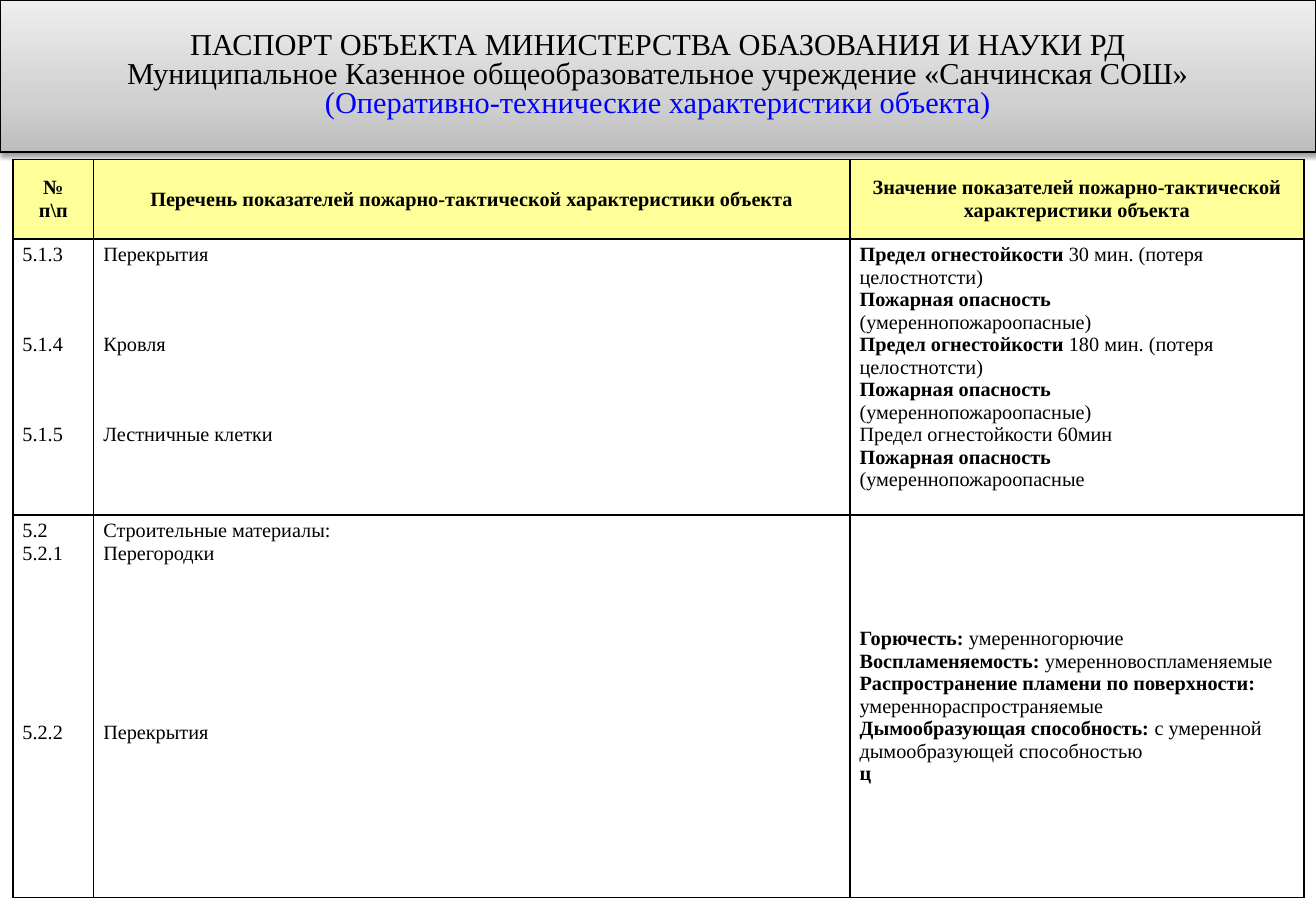
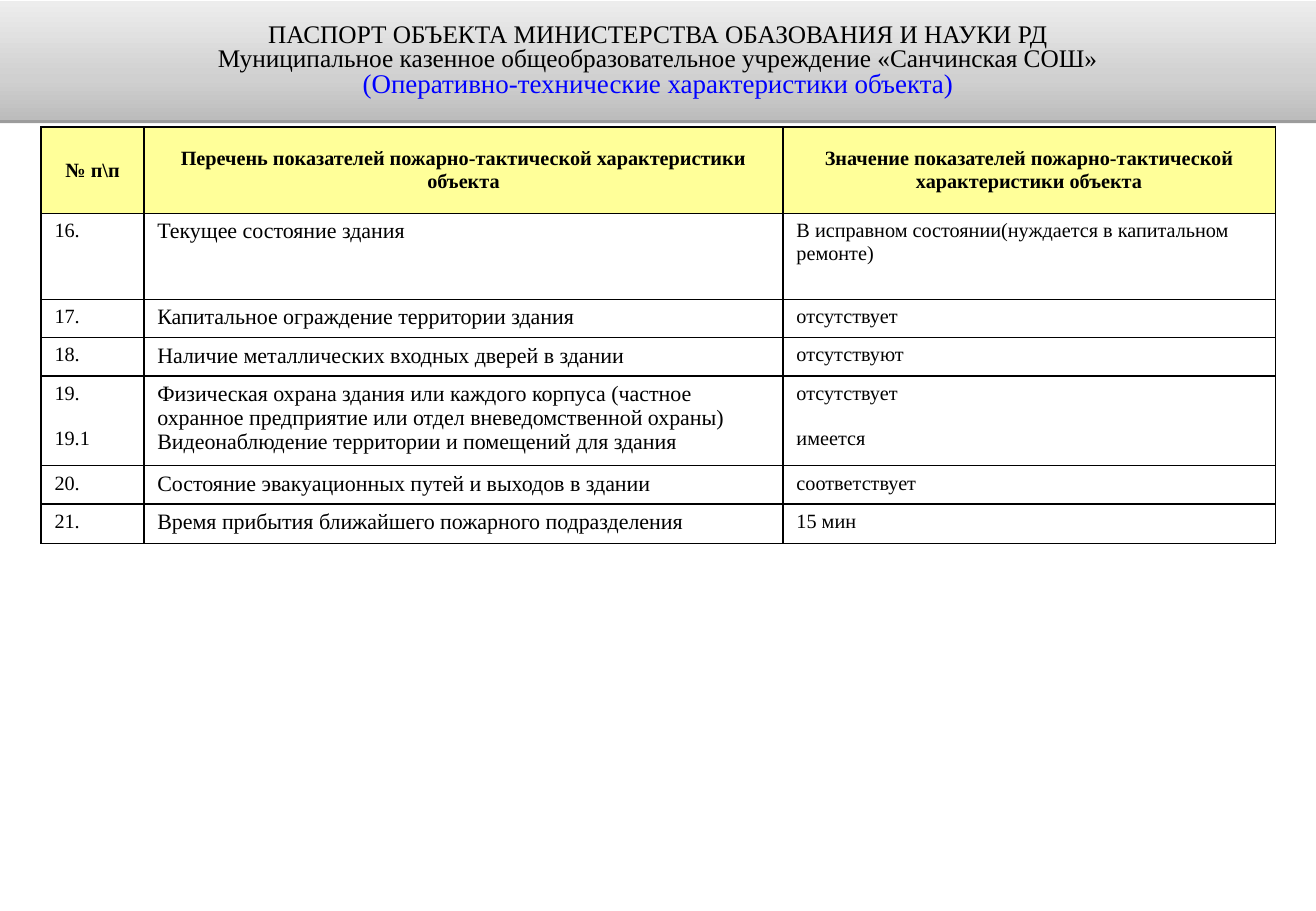
import pptx
import pptx.dml.color
import pptx.enum.text
import pptx.oxml
import pptx.oxml.ns
from pptx.util import Cm

FONT = "Times New Roman"
BLACK = "000000"
BLUE = "0000FF"
YELLOW = "FFFF99"
WHITE = "FFFFFF"
LINE_HEIGHT = 13.3
NAMESPACE = pptx.oxml.ns.nsdecls("a")
CENTER = pptx.enum.text.PP_ALIGN.CENTER
MIDDLE = pptx.enum.text.MSO_ANCHOR.MIDDLE
TOP = pptx.enum.text.MSO_ANCHOR.TOP


def rgb(value):
    return pptx.dml.color.RGBColor.from_string(value)


def style(paragraph, size, color=BLACK):
    paragraph.font.name = FONT
    paragraph.font.size = pptx.util.Pt(size)
    paragraph.font.color.rgb = rgb(color)


HEADINGS = [
    ["Перечень показателей пожарно-тактической характеристики объекта"],
    ["Значение показателей пожарно-тактической характеристики объекта"],
]

passport_pages = [
    {
        "school": "Муниципальное Казенное общеобразовательное учреждение «Санчинская СОШ»",
        "band": (0, 3.18),
        "band_sizes": (18, 18, 18),
        "band_line": 0.75,
        "gradient": ("BDBDBD", "D1D1D1", "EEEEEE"),
        "blur": 3.1,
        "corner": (0.27, 3.34),
        "widths": (1.69, 15.81, 9.49),
        "heights": (1.66, 5.77, 8),
        "insets": (0.2, 0.1),
        "column_sizes": (12, 12, 12),
        "centred_cells": [(2, 2)],
        "rows": [
            [["№", "п\\п"], *HEADINGS],
            [
                ["5.1.3", "\n\n\n5.1.4", "\n\n\n5.1.5"],
                ["Перекрытия", "\n\n\nКровля", "\n\n\nЛестничные клетки"],
                [
                    "Предел огнестойкости |30 мин. (потеря целостнотсти)",
                    "Пожарная опасность|",
                    "(умереннопожароопасные)",
                    "Предел огнестойкости |180 мин. (потеря целостнотсти)",
                    "Пожарная опасность|",
                    "(умереннопожароопасные)",
                    "Предел огнестойкости 60мин",
                    "Пожарная опасность|",
                    "(умереннопожароопасные",
                ],
            ],
            [
                ["5.2", "5.2.1", "\n\n\n\n\n\n\n5.2.2"],
                ["Строительные материалы:", "Перегородки", "\n\n\n\n\n\n\nПерекрытия"],
                [
                    "Горючесть: |умеренногорючие",
                    "Воспламеняемость: |умеренновоспламеняемые",
                    "Распространение пламени по поверхности:|",
                    "умереннораспространяемые",
                    "Дымообразующая способность: |с умеренной дымообразующей способностью",
                    "ц|",
                ],
            ],
        ],
    },
    {
        "school": "Муниципальное казенное общеобразовательное учреждение «Санчинская СОШ»",
        "band": (0.03, 2.49),
        "band_sizes": (15, 15, 16),
        "band_line": 0,
        "gradient": ("BCBCBC", "D0D0D0", "EDEDED"),
        "blur": 0,
        "corner": (0.86, 2.66),
        "widths": (2.15, 13.36, 10.29),
        "heights": (1.8, 1.8, 0.8, 0.8, 1.88, 0.8, 0.82),
        "insets": (0.28, 0.13),
        "column_sizes": (12, 13, 12),
        "centred_cells": [],
        "rows": [
            [["№ п\\п"], *HEADINGS],
            [["16."], ["Текущее состояние здания"],
             ["В исправном состоянии(нуждается в капитальном ремонте)"]],
            [["17."], ["Капитальное ограждение территории здания"], ["отсутствует"]],
            [["18."], ["Наличие металлических входных дверей в здании"], ["отсутствуют"]],
            [
                ["19.", "\n19.1"],
                [
                    "Физическая охрана здания или каждого корпуса (частное охранное предприятие "
                    "или отдел вневедомственной охраны)",
                    "Видеонаблюдение территории и помещений для здания",
                ],
                ["отсутствует", "\nимеется"],
            ],
            [["20."], ["Состояние эвакуационных путей и выходов в здании"], ["соответствует"]],
            [["21."], ["Время прибытия ближайшего пожарного подразделения"], ["15 мин"]],
        ],
    },
]

presentation = pptx.Presentation()
presentation.slide_width = Cm(27.51)
presentation.slide_height = Cm(19.05)

for page in passport_pages:
    slide = presentation.slides.add_slide(presentation.slide_layouts[5])

    band = slide.shapes.title
    band.left, band.width = 0, presentation.slide_width
    band.top, band.height = (Cm(length) for length in page["band"])
    stops = "".join(
        f'<a:gs pos="{position}"><a:srgbClr val="{color}"/></a:gs>'
        for position, color in zip((0, 35000, 100000), page["gradient"])
    )
    properties = band.element.spPr
    properties.append(pptx.oxml.parse_xml(
        f'<a:gradFill {NAMESPACE} rotWithShape="1"><a:gsLst>{stops}</a:gsLst>'
        '<a:lin ang="16200000" scaled="0"/></a:gradFill>'
    ))
    if page["band_line"]:
        band.line.width = pptx.util.Pt(page["band_line"])
        band.line.color.rgb = rgb(BLACK)
    properties.append(pptx.oxml.parse_xml(
        f'<a:effectLst {NAMESPACE}><a:outerShdw blurRad="{pptx.util.Pt(page["blur"])}" '
        f'dist="{pptx.util.Pt(1.6)}" dir="5400000" rotWithShape="0">'
        f'<a:srgbClr val="{BLACK}"><a:alpha val="38000"/></a:srgbClr></a:outerShdw></a:effectLst>'
    ))
    heading = band.text_frame
    heading.text = "\n".join([
        "ПАСПОРТ ОБЪЕКТА МИНИСТЕРСТВА ОБАЗОВАНИЯ И НАУКИ РД",
        page["school"],
        "(Оперативно-технические характеристики объекта)",
    ])
    heading.auto_size = pptx.enum.text.MSO_AUTO_SIZE.NONE
    heading.vertical_anchor = MIDDLE
    for paragraph, size, color in zip(heading.paragraphs, page["band_sizes"], (BLACK, BLACK, BLUE)):
        paragraph.alignment = CENTER
        paragraph.line_spacing = 0.8
        style(paragraph, size, color)

    left, top = page["corner"]
    indicators = slide.shapes.add_table(
        len(page["rows"]), len(page["widths"]), Cm(left), Cm(top),
        Cm(sum(page["widths"])), Cm(sum(page["heights"])),
    ).table
    indicators.first_row = indicators.horz_banding = False
    for column, width in zip(indicators.columns, page["widths"]):
        column.width = Cm(width)
    for row, height in zip(indicators.rows, page["heights"]):
        row.height = Cm(height)

    for row_index, row in enumerate(page["rows"]):
        is_header = row_index == 0
        for column_index, lines in enumerate(row):
            cell = indicators.cell(row_index, column_index)
            cell.margin_left = cell.margin_right = Cm(page["insets"][0])
            cell.margin_top = cell.margin_bottom = Cm(page["insets"][1])
            is_centred = is_header or (row_index, column_index) in page["centred_cells"]
            cell.vertical_anchor = MIDDLE if is_centred else TOP
            for edge in ("lnL", "lnR", "lnT", "lnB"):
                cell._tc.get_or_add_tcPr().append(pptx.oxml.parse_xml(
                    f'<a:{edge} {NAMESPACE} w="12700"><a:solidFill>'
                    f'<a:srgbClr val="{BLACK}"/></a:solidFill></a:{edge}>'
                ))
            cell.fill.solid()
            cell.fill.fore_color.rgb = rgb(YELLOW if is_header else WHITE)

            for line_index, line in enumerate(lines):
                frame = cell.text_frame
                paragraph = frame.add_paragraph() if line_index else frame.paragraphs[0]
                text = line.lstrip("\n")
                gap = len(line) - len(text)
                if gap:
                    paragraph.space_before = pptx.util.Pt(gap * LINE_HEIGHT)
                if is_header:
                    paragraph.alignment = CENTER
                style(paragraph, 12 if is_header else page["column_sizes"][column_index])
                label, _, value = text.rpartition("|")
                if label and value:
                    paragraph.add_run().text = label
                    paragraph.add_run().text = value
                    paragraph.runs[0].font.bold = True
                else:
                    paragraph.add_run().text = label or value
                    paragraph.font.bold = is_header or bool(label)

presentation.save("out.pptx")
